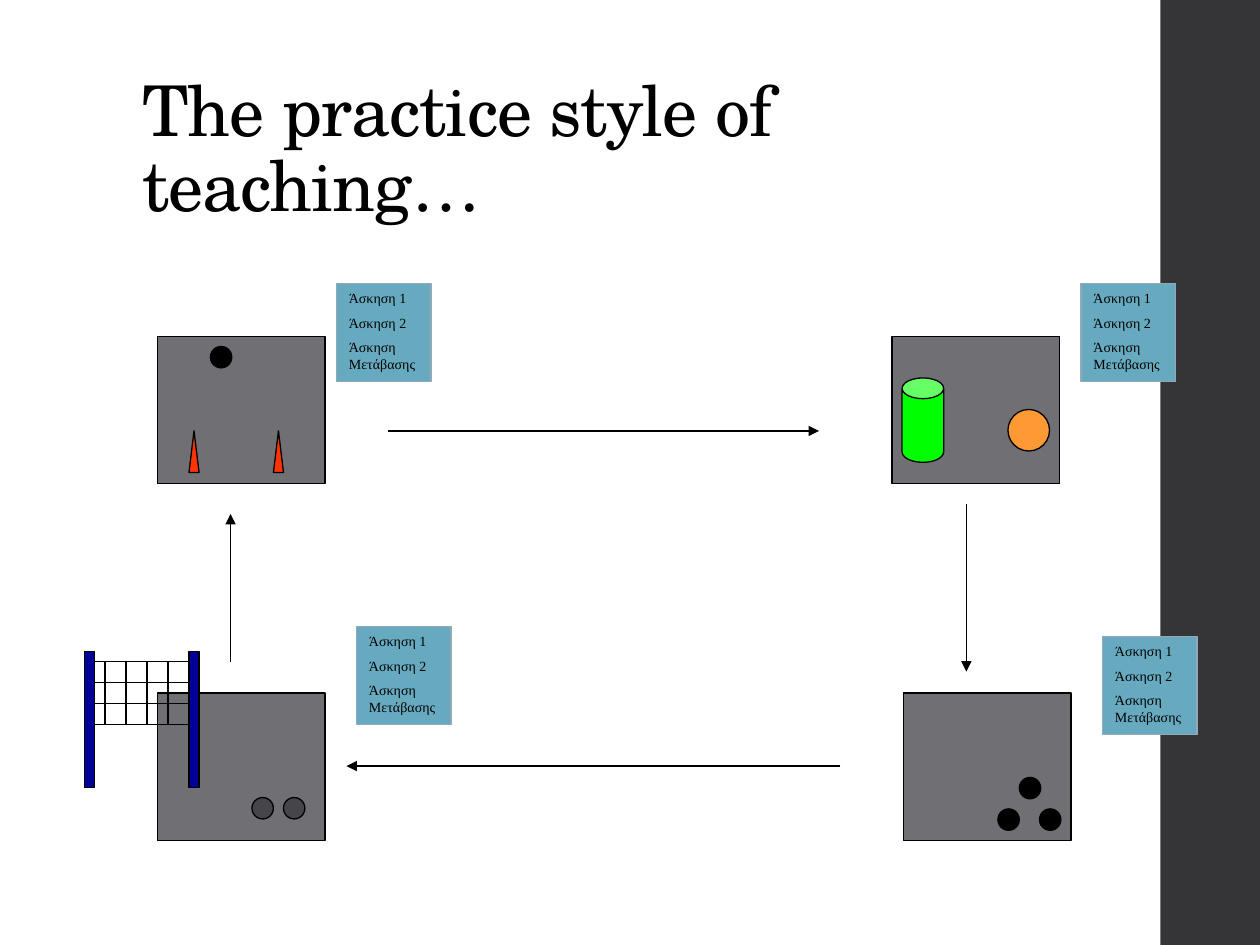
from pptx import Presentation
from pptx.dml.color import RGBColor
from pptx.enum.shapes import MSO_CONNECTOR, MSO_SHAPE
from pptx.enum.text import MSO_ANCHOR, PP_ALIGN
from pptx.oxml.ns import qn
from pptx.util import Inches, Pt
from lxml.etree import SubElement

BLACK = "000000"
EXERCISES = ["Άσκηση 1", "Άσκηση 2", "Άσκηση Μετάβασης"]
STATION_WIDTH, STATION_HEIGHT = 1.33, 1.17
BALL = 0.17


def color(value):
    return RGBColor.from_string(value)


def add_box(slide, kind, left, top, width, height, fill, line=BLACK):
    shape = slide.shapes.add_shape(
        kind, Inches(left), Inches(top), Inches(width), Inches(height))
    shape.shadow.inherit = False
    shape.fill.solid()
    shape.fill.fore_color.rgb = color(fill)
    if line:
        shape.line.color.rgb = color(line)
        shape.line.width = Pt(0.75)
    else:
        shape.line.fill.background()
    return shape


def add_line(slide, start, end, arrow=False):
    points = [Inches(value) for value in (*start, *end)]
    connector = slide.shapes.add_connector(MSO_CONNECTOR.STRAIGHT, *points)
    connector.line.color.rgb = color(BLACK)
    connector.line.width = Pt(0.75)
    properties = connector.line._get_or_add_ln()
    if arrow:
        SubElement(properties, qn("a:tailEnd"), type="triangle")
    SubElement(properties.getparent(), qn("a:effectLst"))


def write(frame, text, size, font, first=False, before=0, spacing=None, tracking=None):
    paragraph = frame.paragraphs[0] if first else frame.add_paragraph()
    paragraph.alignment = PP_ALIGN.LEFT
    paragraph.space_before = Pt(before)
    if spacing:
        paragraph.line_spacing = spacing
    run = paragraph.add_run()
    run.text = text
    run.font.size = Pt(size)
    run.font.name = font
    run.font.color.rgb = color(BLACK)
    if tracking:
        run.font._element.set("spc", str(int(tracking * 100)))


def add_title(slide, left, top, width, height):
    box = slide.shapes.add_textbox(
        Inches(left), Inches(top), Inches(width), Inches(height))
    frame = box.text_frame
    frame.word_wrap = True
    frame.vertical_anchor = MSO_ANCHOR.BOTTOM
    write(frame, "The practice style of teaching…", 40, "TeX Gyre Schola",
          first=True, spacing=0.9, tracking=-0.5)


def add_task_card(slide, left, top, width=0.75, height=0.78):
    card = add_box(slide, MSO_SHAPE.RECTANGLE, left, top, width, height,
                   "67AABF", "92A9B9")
    frame = card.text_frame
    frame.word_wrap = True
    frame.vertical_anchor = MSO_ANCHOR.TOP
    for index, exercise in enumerate(EXERCISES):
        write(frame, exercise, 8, "Times New Roman", first=index == 0, before=4.5)


def add_station(slide, left, top):
    add_box(slide, MSO_SHAPE.RECTANGLE, left, top,
            STATION_WIDTH, STATION_HEIGHT, "6F6F74")


def add_ball(slide, left, top, size=BALL, fill=BLACK):
    add_box(slide, MSO_SHAPE.OVAL, left, top, size, size, fill)


def add_goal_station(slide, left, top):
    add_station(slide, left, top)
    add_ball(slide, left + 0.42, top + 0.08)
    for offset in (0.25, 0.92):
        add_box(slide, MSO_SHAPE.FLOWCHART_EXTRACT, left + offset, top + 0.75,
                0.08, 0.33, "FF3300")


def add_basket_station(slide, left, top):
    add_station(slide, left, top)
    add_ball(slide, left + 0.92, top + 0.58, 0.33, "FF9933")
    can = add_box(slide, MSO_SHAPE.CAN, left + 0.08, top + 0.33, 0.33, 0.67, "00FF00")
    can.adjustments[0] = 0.5


def add_throwing_station(slide, left, top):
    add_station(slide, left, top)
    for across, down in ((0.75, 0.92), (0.92, 0.67), (1.08, 0.92)):
        add_ball(slide, left + across, top + down)


def add_net(slide, left, top, width, height):
    post = 0.08
    for post_left in (left, left + width - post):
        add_box(slide, MSO_SHAPE.RECTANGLE, post_left, top, post, height, "000099")
    net_left, net_right = left + post, left + width - post
    net_top, net_bottom = top + 0.08, top + 0.58
    cell = (net_bottom - net_top) / 3
    for row in range(4):
        y = net_top + row * cell
        add_line(slide, (net_left, y), (net_right, y))
    for column in range(4):
        x = net_left + cell / 2 + column * cell
        add_line(slide, (x, net_top), (x, net_bottom))


def add_net_station(slide, left, top):
    add_station(slide, left, top)
    for offset in (0.75, 1):
        add_ball(slide, left + offset, top + 0.83, fill="46464A")
    add_net(slide, left - 0.58, top - 0.33, 0.91, 1.08)


def main():
    presentation = Presentation()
    presentation.slide_width = Inches(10)
    presentation.slide_height = Inches(7.5)
    slide = presentation.slides.add_slide(presentation.slide_layouts[6])

    add_box(slide, MSO_SHAPE.RECTANGLE, 9.21, 0, 0.79, 7.5, "353537", None)
    add_title(slide, 1.03, 0.4, 7.95, 1.45)

    add_goal_station(slide, 1.25, 2.67)
    add_basket_station(slide, 7.08, 2.67)
    add_throwing_station(slide, 7.17, 5.5)
    add_net_station(slide, 1.25, 5.5)

    for start, end in (((3.08, 3.42), (6.5, 3.42)),
                       ((7.67, 4), (7.67, 5.33)),
                       ((6.67, 6.08), (2.75, 6.08)),
                       ((1.83, 5.25), (1.83, 4.08))):
        add_line(slide, start, end, arrow=True)

    for left, top in ((2.67, 2.25), (8.58, 2.25), (8.75, 5.05), (2.83, 4.97)):
        add_task_card(slide, left, top)

    presentation.save("out.pptx")


if __name__ == "__main__":
    main()
